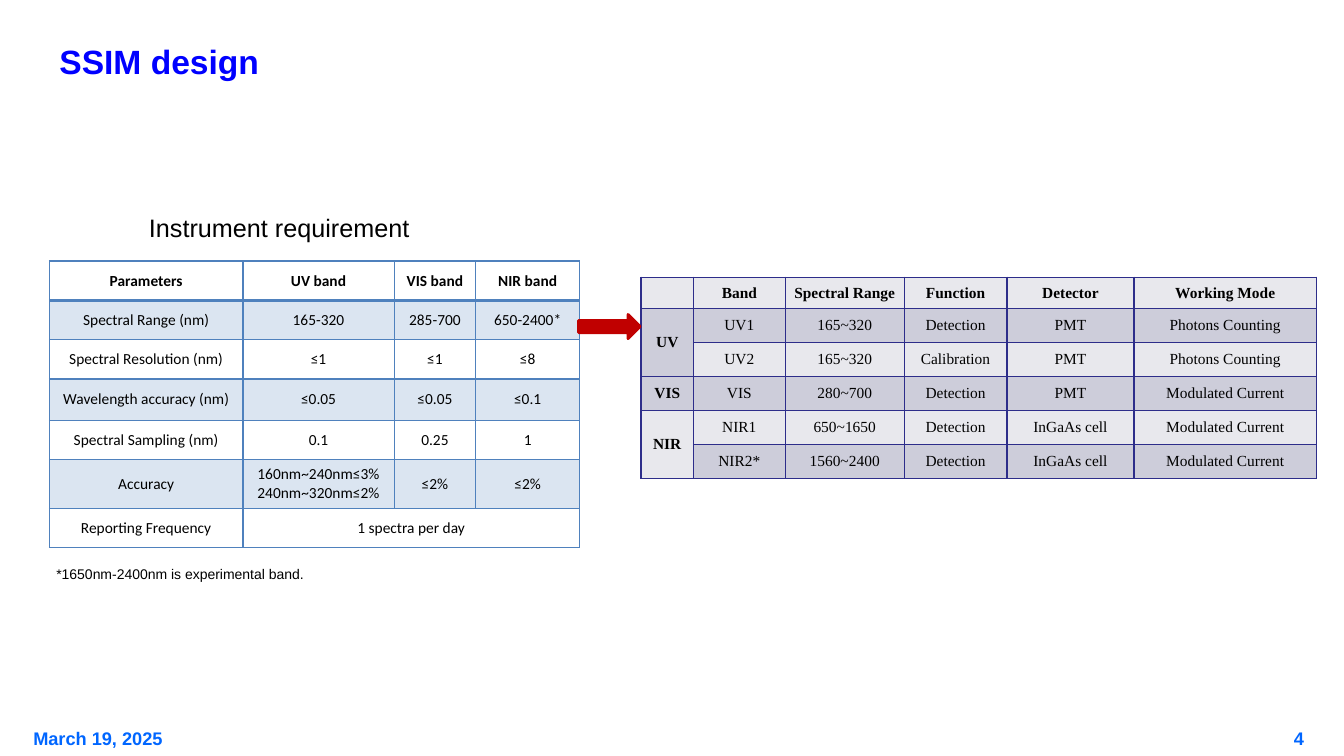
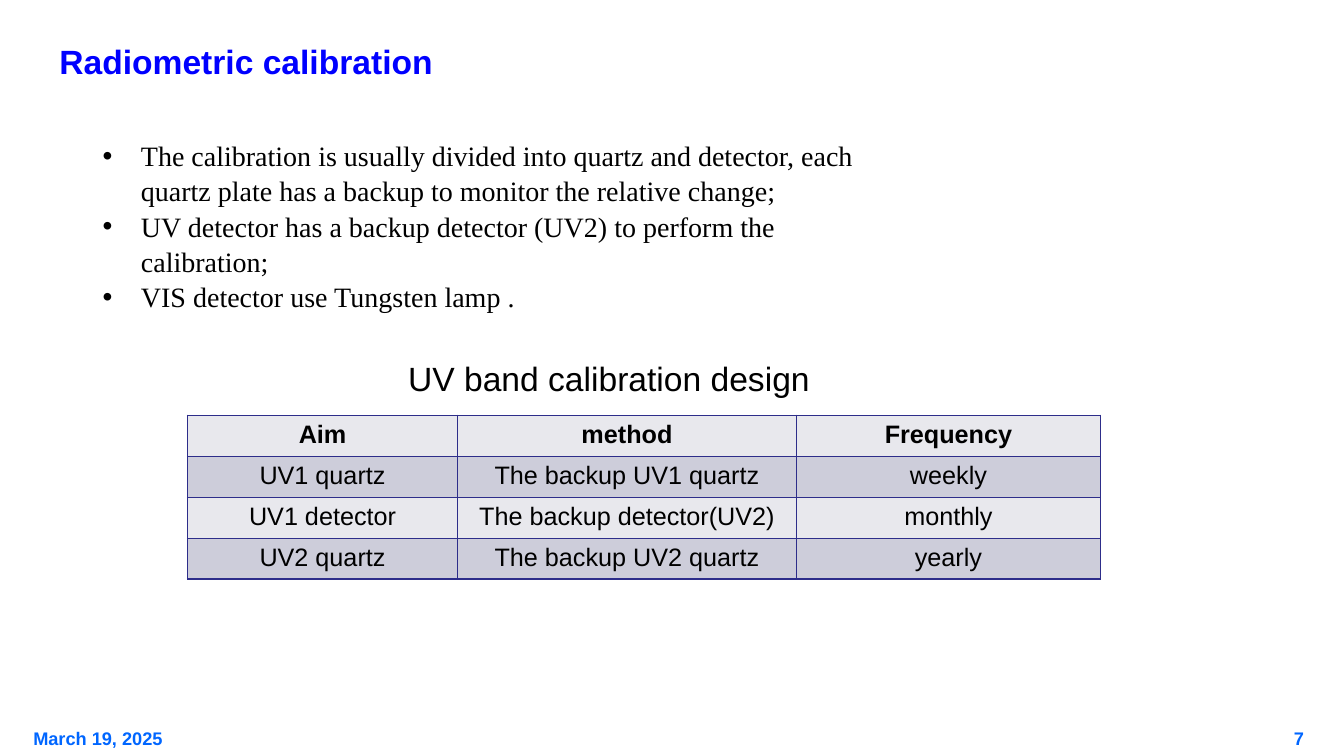
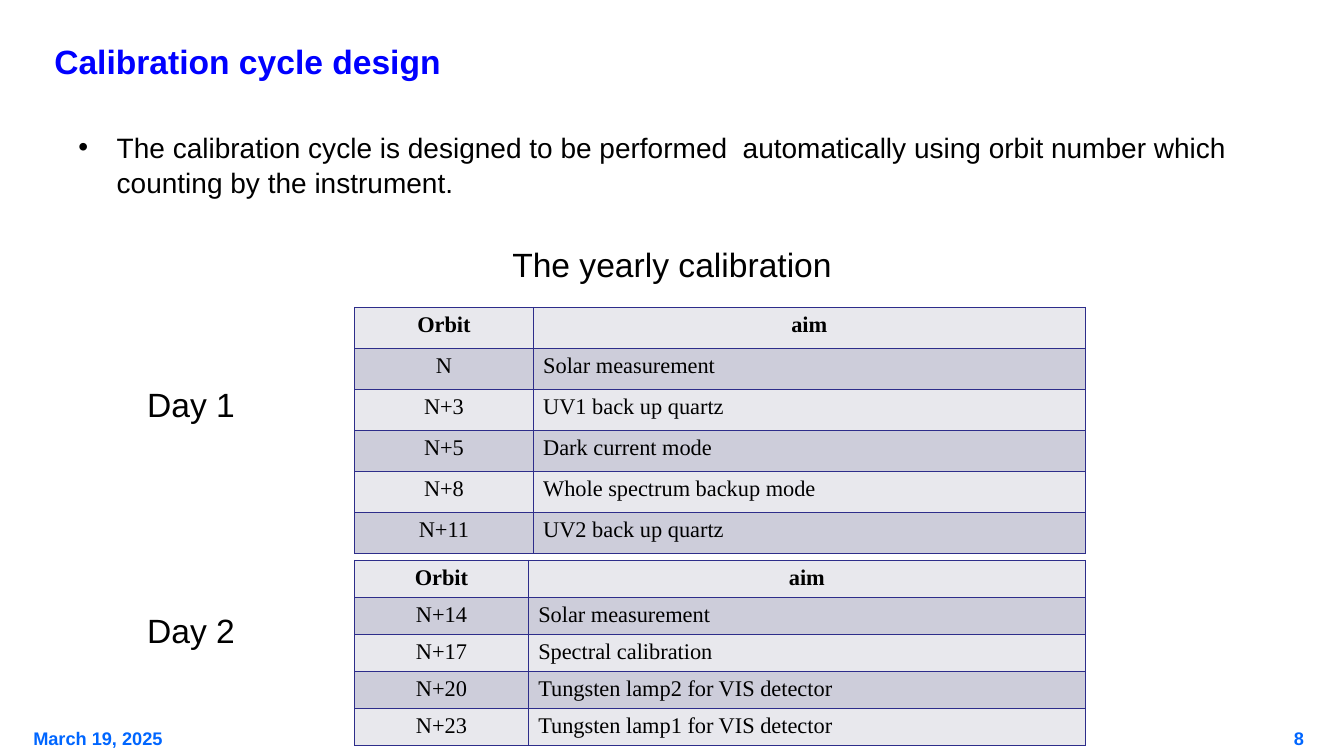
from pptx import Presentation
from pptx.dml.color import RGBColor
from pptx.enum.shapes import MSO_SHAPE
from pptx.enum.text import MSO_ANCHOR, PP_ALIGN
from pptx.oxml import parse_xml
from pptx.oxml.ns import nsdecls, qn
from pptx.util import Inches, Pt

WIDTH, HEIGHT = Inches(13.333), Inches(7.5)
COLORS = {
    "title": "0000FF", "footer": "0066FF", "text": "000000",
    "blue": "4F81BD", "navy": "2D2D8A", "red": "C00000",
    "light": "E8E8ED", "dark": "CDCDDA",
}
FORMATS = {
    "title": {"size": Pt(24), "name": "Arial", "bold": True},
    "footer": {"size": Pt(13), "name": "Arial", "bold": True},
    "heading": {"size": Pt(24), "name": "Arial"},
    "caption": {"size": Pt(18), "name": "Arial"},
    "note": {"size": Pt(10), "name": "Arial"},
    "points": {"size": Pt(20), "name": "Arial"},
    "serif points": {"size": Pt(20), "name": "Times New Roman"},
    "requirement": {"size": Pt(11), "name": "Calibri"},
    "band": {"size": Pt(11), "name": "Times New Roman"},
    "method": {"size": Pt(18), "name": "Arial"},
    "orbit": {"size": Pt(16), "name": "Times New Roman"},
}
FOOTER_INSETS = {
    "margin_left": Inches(0.13), "margin_right": Inches(0.13),
    "margin_top": Inches(0.07), "margin_bottom": Inches(0.07),
}
MIDDLE = {"vertical_anchor": MSO_ANCHOR.MIDDLE}
TIGHT = MIDDLE | {
    "margin_left": Inches(0.07), "margin_right": Inches(0.07),
    "margin_top": 0, "margin_bottom": 0,
}
GRAY_ROWS = [("light", 100), ("dark", 100)]
BLUE_ROWS = [None, ("blue", 20)]


def across(share):
    return round(WIDTH * share / 100)


def down(share):
    return round(HEIGHT * share / 100)


def area(left, top, width, height):
    return across(left), down(top), across(width), down(height)


def apply(target, values):
    for name, value in values.items():
        setattr(target, name, value)


def rgb(color):
    return RGBColor.from_string(COLORS[color])


def write(p, text, style, color="text", **extra):
    r = p.add_run()
    r.text = text
    apply(r.font, FORMATS[style] | extra)
    r.font.color.rgb = rgb(color)


def add_text(s, box, text, style, color="text", align=PP_ALIGN.LEFT, insets={}):
    tf = s.shapes.add_textbox(*area(*box)).text_frame
    apply(tf, {"word_wrap": True} | insets)
    tf.paragraphs[0].alignment = align
    write(tf.paragraphs[0], text, style, color)


def add_bullets(s, box, points, style):
    tf = s.shapes.add_textbox(*area(*box)).text_frame
    tf.word_wrap = True
    for i, point in enumerate(points):
        p = tf.paragraphs[0] if i == 0 else tf.add_paragraph()
        p.line_spacing = 1.05
        pPr = p._p.get_or_add_pPr()
        pPr.set("marL", str(Inches(0.38)))
        pPr.set("indent", str(-Inches(0.38)))
        pPr.append(parse_xml(f'<a:buFont {nsdecls("a")} typeface="Arial"/>'))
        pPr.append(parse_xml(f'<a:buChar {nsdecls("a")} char="•"/>'))
        write(p, point, style)


def fill_cell(cell, fill):
    if fill is None:
        cell.fill.background()
        return
    color, opacity = fill
    cell.fill.solid()
    cell.fill.fore_color.rgb = rgb(color)
    if opacity < 100:
        srgb = cell._tc.tcPr.find(qn("a:solidFill")).find(qn("a:srgbClr"))
        srgb.append(parse_xml(f'<a:alpha {nsdecls("a")} val="{opacity * 1000}"/>'))


def border_cell(cell, color, widths):
    tcPr = cell._tc.get_or_add_tcPr()
    for i, side in enumerate("LRTB"):
        width = Pt(widths.get(side, 1))
        tcPr.insert(i, parse_xml(
            f'<a:ln{side} {nsdecls("a")} w="{width}"><a:solidFill>'
            f'<a:srgbClr val="{COLORS[color]}"/></a:solidFill></a:ln{side}>'))


def add_grid(s, left, top, cols, heights, rows, style, line="navy", fills=GRAY_ROWS,
             cell_format={}, head_rule=1, bold_cols=0, left_cols=(), merges=()):
    box = area(left, top, sum(cols), sum(heights))
    table = s.shapes.add_table(len(rows), len(cols), *box).table
    apply(table, {"first_row": False, "horz_banding": False})
    for col, width in zip(table.columns, cols):
        col.width = across(width)
    for row, height in zip(table.rows, heights):
        row.height = down(height)
    for i, row in enumerate(rows):
        rule = {0: {"B": head_rule}, 1: {"T": head_rule}}.get(i, {})
        for j, text in enumerate(row):
            cell = table.cell(i, j)
            apply(cell, cell_format)
            fill_cell(cell, fills[i % 2])
            border_cell(cell, line, rule)
            for k, part in enumerate(text.split("\n")):
                tf = cell.text_frame
                p = tf.paragraphs[0] if k == 0 else tf.add_paragraph()
                to_left = i > 0 and j in left_cols
                p.alignment = PP_ALIGN.LEFT if to_left else PP_ALIGN.CENTER
                write(p, part, style, bold=i == 0 or j < bold_cols)
    for first, last in merges:
        table.cell(*first).merge(table.cell(*last))


def add_arrow(s, box, color):
    arrow = s.shapes.add_shape(MSO_SHAPE.RIGHT_ARROW, *area(*box))
    arrow.shadow.inherit = False
    arrow.fill.solid()
    arrow.fill.fore_color.rgb = rgb(color)
    arrow.line.color.rgb = rgb(color)
    arrow.line.width = Pt(2)


def new_slide(prs, title, number, left=3.68):
    s = prs.slides.add_slide(prs.slide_layouts[6])
    add_text(s, (1.5, 95.33, 23.3, 2.93), "March 19, 2025", "footer", "footer",
             insets=FOOTER_INSETS)
    add_text(s, (74.7, 95.33, 23.3, 2.93), number, "footer", "footer",
             PP_ALIGN.RIGHT, FOOTER_INSETS)
    add_text(s, (left, 4.8, 33.3, 6.67), title, "title", "title")
    return s


def design_slide(prs):
    s = new_slide(prs, "SSIM design", "4")
    add_text(s, (5.7, 27.47, 30.15, 5.33), "Instrument requirement", "caption",
             align=PP_ALIGN.CENTER)
    requirements = [
        ["Parameters", "UV band", "VIS band", "NIR band"],
        ["Spectral Range (nm)", "165-320", "285-700", "650-2400*"],
        ["Spectral Resolution (nm)", "≤1", "≤1", "≤8"],
        ["Wavelength accuracy (nm)", "≤0.05", "≤0.05", "≤0.1"],
        ["Spectral Sampling (nm)", "0.1", "0.25", "1"],
        ["Accuracy", "160nm~240nm≤3%\n240nm~320nm≤2%", "≤2%", "≤2%"],
        ["Reporting Frequency", "1 spectra per day", "", ""],
    ]
    add_grid(s, 3.68, 34.53, [14.4, 11.25, 6.08, 7.72],
             [5.2, 5.2, 5.2, 5.5, 5.2, 6.4, 5.2], requirements, "requirement",
             "blue", BLUE_ROWS, MIDDLE, head_rule=2, merges=[((6, 1), (6, 3))])
    add_text(s, (3.45, 74.13, 21.8, 3.6), "*1650nm-2400nm is experimental band.", "note")
    bands = [
        ["", "Band", "Spectral Range", "Function", "Detector", "Working Mode"],
        ["UV", "UV1", "165~320", "Detection", "PMT", "Photons Counting"],
        ["", "UV2", "165~320", "Calibration", "PMT", "Photons Counting"],
        ["VIS", "VIS", "280~700", "Detection", "PMT", "Modulated Current"],
        ["NIR", "NIR1", "650~1650", "Detection", "InGaAs cell", "Modulated Current"],
        ["", "NIR2*", "1560~2400", "Detection", "InGaAs cell", "Modulated Current"],
    ]
    add_grid(s, 47.7, 36.67, [3.9, 6.83, 8.85, 7.65, 9.45, 13.58],
             [4.13] + [4.5] * 5, bands, "band", cell_format=TIGHT, bold_cols=1,
             merges=[((1, 0), (2, 0)), ((4, 0), (5, 0))])
    add_arrow(s, (43.05, 41.6, 4.58, 3.2), "red")


def radiometric_slide(prs):
    s = new_slide(prs, "Radiometric calibration", "7")
    add_bullets(s, (6.9, 17.47, 58.5, 23.73), [
        "The calibration is usually divided into quartz and detector, each "
        "quartz plate has a backup to monitor the relative change;",
        "UV detector has a backup detector (UV2) to perform the calibration;",
        "VIS detector use Tungsten lamp .",
    ], "serif points")
    add_text(s, (29.63, 46.67, 40.7, 6.67), "UV band calibration design", "heading")
    methods = [
        ["Aim", "method", "Frequency"],
        ["UV1 quartz", "The backup UV1 quartz", "weekly"],
        ["UV1 detector", "The backup detector(UV2)", "monthly"],
        ["UV2 quartz", "The backup UV2 quartz", "yearly"],
    ]
    add_grid(s, 13.95, 54.93, [20.1, 25.2, 22.65], [5.42] * 4, methods, "method")


def cycle_slide(prs):
    s = new_slide(prs, "Calibration cycle design", "8", left=3.3)
    add_bullets(s, (5.1, 16.4, 88.58, 10.27), [
        "The calibration cycle is designed to be performed  automatically using "
        "orbit number which counting by the instrument.",
    ], "points")
    add_text(s, (34.35, 31.6, 31.3, 6.67), "The yearly calibration", "heading",
             align=PP_ALIGN.CENTER)
    days = [
        ("Day 1", 50.13, 40.67, [13.27, 41.1], 5.42, [
            ["N", "Solar measurement"],
            ["N+3", "UV1 back up quartz"],
            ["N+5", "Dark current mode"],
            ["N+8", "Whole spectrum backup mode"],
            ["N+11", "UV2 back up quartz"],
        ]),
        ("Day 2", 80, 74.13, [12.9, 41.47], 4.88, [
            ["N+14", "Solar measurement"],
            ["N+17", "Spectral calibration"],
            ["N+20", "Tungsten lamp2 for VIS detector"],
            ["N+23", "Tungsten lamp1 for VIS detector"],
        ]),
    ]
    for day, label_top, top, cols, height, orbits in days:
        add_text(s, (0, label_top, 28.43, 6.67), day, "heading", align=PP_ALIGN.CENTER)
        rows = [["Orbit", "aim"]] + orbits
        add_grid(s, 26.4, top, cols, [height] * len(rows), rows, "orbit", left_cols=(1,))


def main():
    prs = Presentation()
    apply(prs, {"slide_width": WIDTH, "slide_height": HEIGHT})
    for build in (design_slide, radiometric_slide, cycle_slide):
        build(prs)
    prs.save("out.pptx")


if __name__ == "__main__":
    main()
